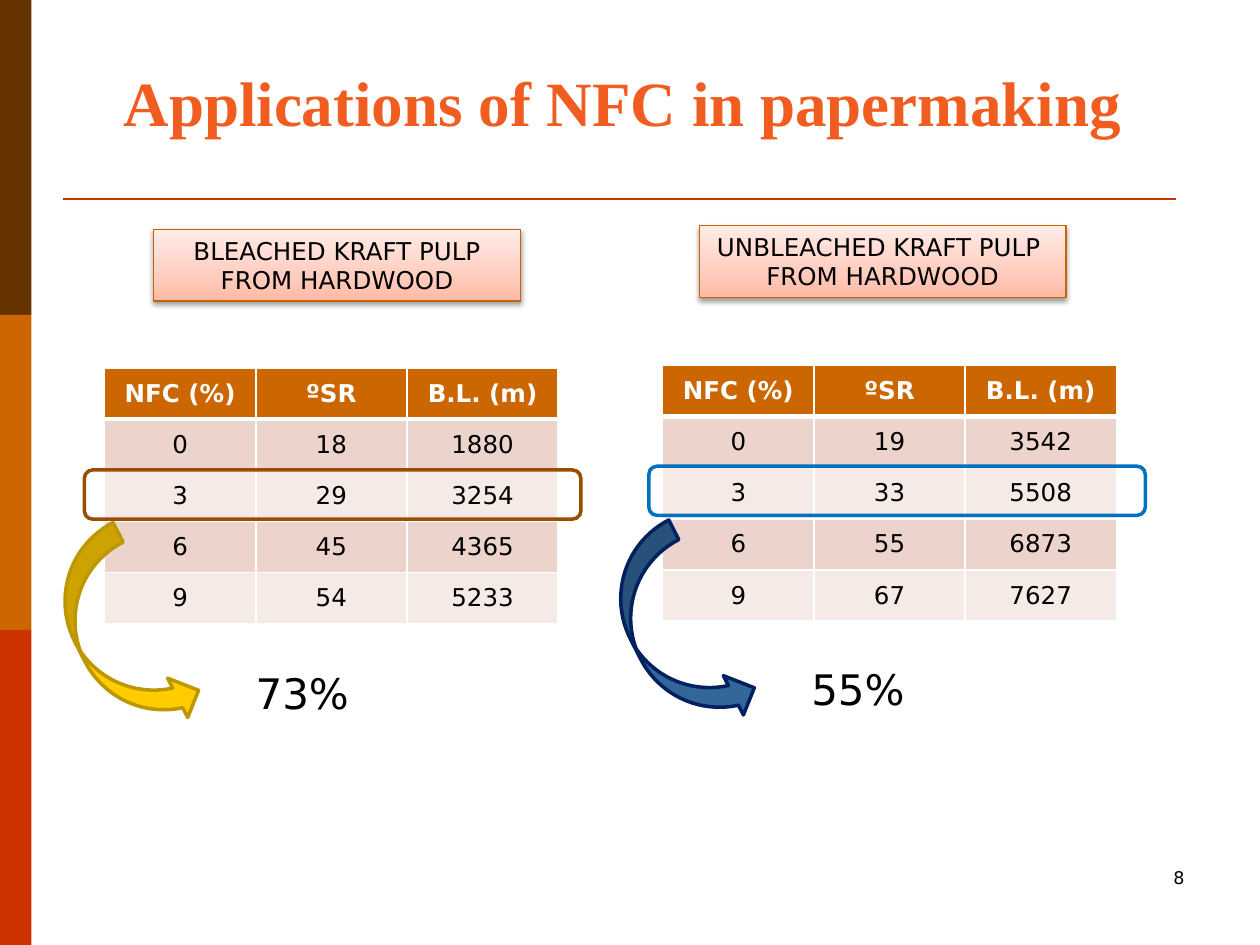
"""Build the slide on NFC in papermaking."""
from lxml.etree import SubElement as Sub
from pptx import Presentation
from pptx.dml.color import RGBColor as RGB
from pptx.enum.shapes import MSO_CONNECTOR as Link, MSO_SHAPE as Kind
from pptx.enum.text import MSO_ANCHOR as Anchor, PP_ALIGN as Align
from pptx.oxml.ns import qn
from pptx.util import Inches, Pt

TITLE = "Applications of NFC in papermaking"
HEAD = ("NFC (%)", "ºSR", "B.L. (m)")
BANDS = ("663300", "CC6600", "CC3300")
STOPS = ((0, "FFB9A5"), (35, "FFCDBF"), (100, "FFECE7"))
PANELS = [
    dict(label="BLEACHED KRAFT PULP\nFROM HARDWOOD", gain="73%",
         rows=((0, 18, 1880), (3, 29, 3254), (6, 45, 4365), (9, 54, 5233)),
         tag=(1.22, 1.82), grid=(0.83, 2.92), ring=(0.67, 3.73),
         note=(1.93, 5.25), arrow=(0.13, 4.7),
         edge="994D00", fill="FFCC00", rim="BD9700"),
    dict(label="UNBLEACHED KRAFT PULP \nFROM HARDWOOD", gain="55%",
         rows=((0, 19, 3542), (3, 33, 5508), (6, 55, 6873), (9, 67, 7627)),
         tag=(5.55, 1.79), grid=(5.26, 2.9), ring=(5.15, 3.7),
         note=(6.34, 5.22), arrow=(4.54, 4.68),
         edge="0070C0", fill="336699", rim="002060"),
]
BODY = dict(name="DejaVu Sans", size=Pt(14), bold=False)
BOLD = BODY | dict(bold=True)
BIG = BODY | dict(size=Pt(24))
SMALL = BODY | dict(size=Pt(10))
TOP = dict(name="Times New Roman", size=Pt(36), bold=True)


def color(code):
    return RGB.from_string(code)


def write(frame, text, form, align=Align.CENTER, ink="000000"):
    frame.text = text
    for para in frame.paragraphs:
        para.alignment = align
        for key, val in form.items():
            setattr(para.font, key, val)
        para.font.color.rgb = color(ink)


def box(slide, at, text, form, align, ink="000000", anchor=Anchor.TOP):
    frame = slide.shapes.add_textbox(*map(Inches, at)).text_frame
    frame.word_wrap = True
    frame.vertical_anchor = anchor
    write(frame, text, form, align, ink)


def shape(slide, kind, at, fill=None, line=None, width=2):
    item = slide.shapes.add_shape(kind, *map(Inches, at))
    item.shadow.inherit = False
    if fill:
        item.fill.solid()
        item.fill.fore_color.rgb = color(fill)
    else:
        item.fill.background()
    if line:
        item.line.color.rgb = color(line)
        item.line.width = Pt(width)
    else:
        item.line.fill.background()
    return item


def tint(root, code):
    return Sub(root, qn("a:srgbClr"), val=code)


def label(slide, spot, text):
    item = shape(slide, Kind.RECTANGLE, (*spot, 2.91, 0.57),
                 line="C86400", width=0.75)
    item.fill.gradient()
    item.fill.gradient_angle = 90
    props = item._element.spPr
    stops = props.find(qn("a:gradFill")).find(qn("a:gsLst"))
    for old in list(stops):
        stops.remove(old)
    for pos, code in STOPS:
        tint(Sub(stops, qn("a:gs"), pos=str(pos * 1000)), code)
    glow = Sub(props.find(qn("a:effectLst")), qn("a:outerShdw"),
               blurRad=str(Pt(3.1)), dist=str(Pt(1.6)), dir="5400000",
               rotWithShape="0")
    Sub(tint(glow, "000000"), qn("a:alpha"), val="38000")
    item.text_frame.word_wrap = True
    write(item.text_frame, text, BODY)


def border(cell, row):
    props = cell._tc.get_or_add_tcPr()
    for side in "LRTB":
        thick = (row, side) in ((0, "B"), (1, "T"))
        line = Sub(props, qn(f"a:ln{side}"), w=str(Pt(3 if thick else 1)))
        tint(Sub(line, qn("a:solidFill")), "FFFFFF")


def grid(slide, spot, rows):
    data = [HEAD, *rows]
    size = (len(data), len(HEAD))
    table = slide.shapes.add_table(
        *size, *map(Inches, (*spot, 3.6, 2.03))).table
    for r, vals in enumerate(data):
        table.rows[r].height = Inches(2.03 / len(data))
        shade = ("F6EAE7", "ECD3CC")[r % 2] if r else "CC6600"
        for c, val in enumerate(vals):
            cell = table.cell(r, c)
            border(cell, r)
            cell.fill.solid()
            cell.fill.fore_color.rgb = color(shade)
            cell.vertical_anchor = Anchor.MIDDLE
            write(cell.text_frame, str(val), BODY if r else BOLD,
                  ink="000000" if r else "FFFFFF")


def panel(slide, part):
    label(slide, part["tag"], part["label"])
    grid(slide, part["grid"], part["rows"])
    shape(slide, Kind.ROUNDED_RECTANGLE, (*part["ring"], 3.94, 0.39),
          line=part["edge"])
    box(slide, (*part["note"], 1.18, 0.5), part["gain"], BIG, Align.LEFT)
    arrow = shape(slide, Kind.CURVED_DOWN_ARROW, (*part["arrow"], 1.67, 0.7),
                  part["fill"], part["rim"])
    arrow.rotation = 63
    arrow._element.spPr.xfrm.set("flipV", "1")


def main():
    deck = Presentation()
    deck.slide_width, deck.slide_height = Inches(10), Inches(7.5)
    slide = deck.slides.add_slide(deck.slide_layouts[6])
    for n, code in enumerate(BANDS):
        shape(slide, Kind.RECTANGLE, (0, 2.5 * n, 0.25, 2.5), code)
    rule = slide.shapes.add_connector(
        Link.STRAIGHT, *map(Inches, (0.5, 1.58, 9.33, 1.58)))
    rule.line.color.rgb = color("CC3300")
    rule.line.width = Pt(1.5)
    Sub(rule._element.spPr, qn("a:effectLst"))
    box(slide, (7.17, 6.83, 2.33, 0.5), "8", SMALL, Align.RIGHT)
    box(slide, (0.47, 0.36, 8.94, 0.79), TITLE, TOP, Align.CENTER,
        "F15D20", Anchor.BOTTOM)
    for part in PANELS:
        panel(slide, part)
    deck.save("out.pptx")


if __name__ == "__main__":
    main()
